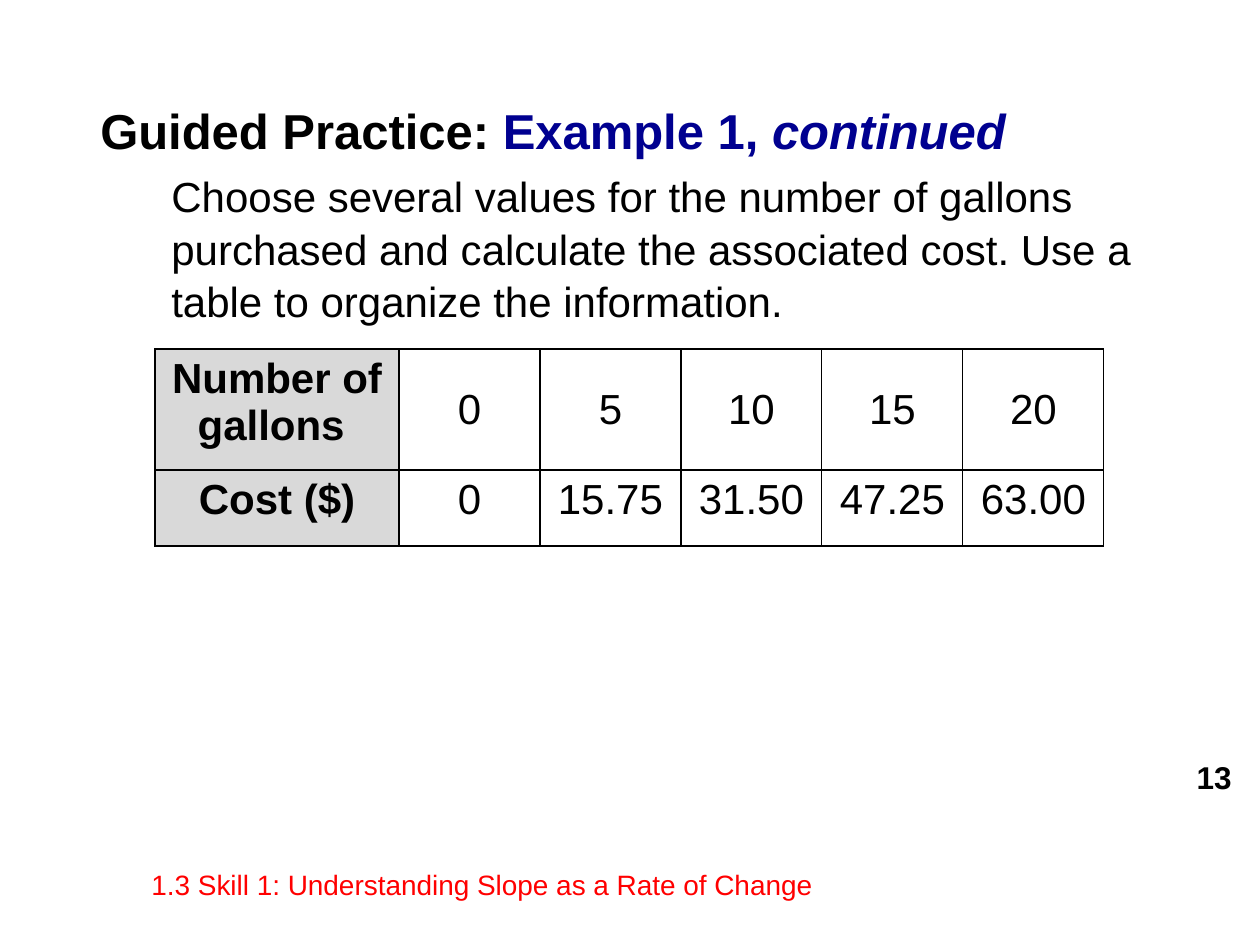
import pptx
import pptx.dml.color
import pptx.enum.text
import pptx.oxml
import pptx.oxml.ns
import pptx.util

PIXELS_PER_INCH = 126
ALIGN = pptx.enum.text.PP_ALIGN
ANCHOR = pptx.enum.text.MSO_ANCHOR


def px(length):
    return round(length * 914400 / PIXELS_PER_INCH)


def color(value):
    return pptx.dml.color.RGBColor.from_string(value)


def add_run(paragraph, text, size=24, fill="000000", bold=False, italic=False):
    run = paragraph.add_run()
    run.text = text
    run.font.name = "Arial"
    run.font.size = pptx.util.Pt(size)
    run.font.bold = bold
    run.font.italic = italic
    run.font.color.rgb = color(fill)


class SlideBuilder:
    border_color = "000000"
    border_width = 0.75
    header_fill = "D9D9D9"
    cell_fill = "FFFFFF"

    def __init__(self, presentation):
        self.slide = presentation.slides.add_slide(presentation.slide_layouts[6])

    def text_frame(self, left, top, width, height, anchor=ANCHOR.TOP):
        shape = self.slide.shapes.add_textbox(px(left), px(top), px(width), px(height))
        frame = shape.text_frame
        frame.word_wrap = True
        frame.vertical_anchor = anchor
        return frame

    def label(self, box, text, align=ALIGN.LEFT, anchor=ANCHOR.TOP, **style):
        paragraph = self.text_frame(*box, anchor=anchor).paragraphs[0]
        paragraph.alignment = align
        add_run(paragraph, text, **style)

    def heading_and_body(self, box, heading, body, indent):
        frame = self.text_frame(*box)
        title = frame.paragraphs[0]
        title.line_spacing = 1.05
        for text, style in heading:
            add_run(title, text, size=28, bold=True, **style)
        paragraph = frame.add_paragraph()
        paragraph.line_spacing = 1.05
        paragraph.space_before = pptx.util.Pt(5)
        paragraph._p.get_or_add_pPr().set("marL", str(px(indent)))
        add_run(paragraph, body)

    def border(self, cell):
        properties = cell._tc.get_or_add_tcPr()
        for index, side in enumerate(("lnL", "lnR", "lnT", "lnB")):
            line = pptx.oxml.parse_xml(
                f'<a:{side} {pptx.oxml.ns.nsdecls("a")} w="{pptx.util.Pt(self.border_width)}">'
                f'<a:solidFill><a:srgbClr val="{self.border_color}"/></a:solidFill></a:{side}>'
            )
            properties.insert(index, line)

    def table(self, left, top, column_widths, row_heights, rows, anchors):
        table = self.slide.shapes.add_table(
            len(rows), len(column_widths), px(left), px(top),
            px(sum(column_widths)), px(sum(row_heights)),
        ).table
        table.first_row = False
        table.horz_banding = False
        for column, width in zip(table.columns, column_widths):
            column.width = px(width)
        for row, height in zip(table.rows, row_heights):
            row.height = px(height)
        for row_index, values in enumerate(rows):
            for column_index, value in enumerate(values):
                is_header = column_index == 0
                cell = table.cell(row_index, column_index)
                cell.fill.solid()
                cell.fill.fore_color.rgb = color(self.header_fill if is_header else self.cell_fill)
                cell.vertical_anchor = ANCHOR.TOP if is_header else anchors[row_index]
                paragraph = cell.text_frame.paragraphs[0]
                paragraph.alignment = ALIGN.CENTER
                add_run(paragraph, value, bold=is_header)
                self.border(cell)


def main():
    presentation = pptx.Presentation()
    presentation.slide_width = px(1260)
    presentation.slide_height = px(945)
    builder = SlideBuilder(presentation)
    builder.label((1143, 757, 101, 39), "13", align=ALIGN.RIGHT, anchor=ANCHOR.MIDDLE,
                  size=18, bold=True)
    builder.heading_and_body(
        (88, 91, 1082, 686),
        [
            ("Guided Practice: ", {}),
            ("Example 1, ", {"fill": "000090"}),
            ("continued", {"fill": "000090", "italic": True}),
        ],
        "Choose several values for the number of gallons purchased and calculate "
        "the associated cost. Use a table to organize the information.",
        indent=71,
    )
    builder.label((139, 861, 840, 49), "1.3 Skill 1: Understanding Slope as a Rate of Change",
                  size=16, fill="FF0000")
    builder.table(
        155, 349, [244] + [141] * 5, [121, 76],
        [
            ["Number of gallons ", "0", "5", "10", "15", "20"],
            ["Cost ($)", "0", "15.75", "31.50", "47.25", "63.00"],
        ],
        anchors=[ANCHOR.MIDDLE, ANCHOR.TOP],
    )
    presentation.save("out.pptx")


if __name__ == "__main__":
    main()
